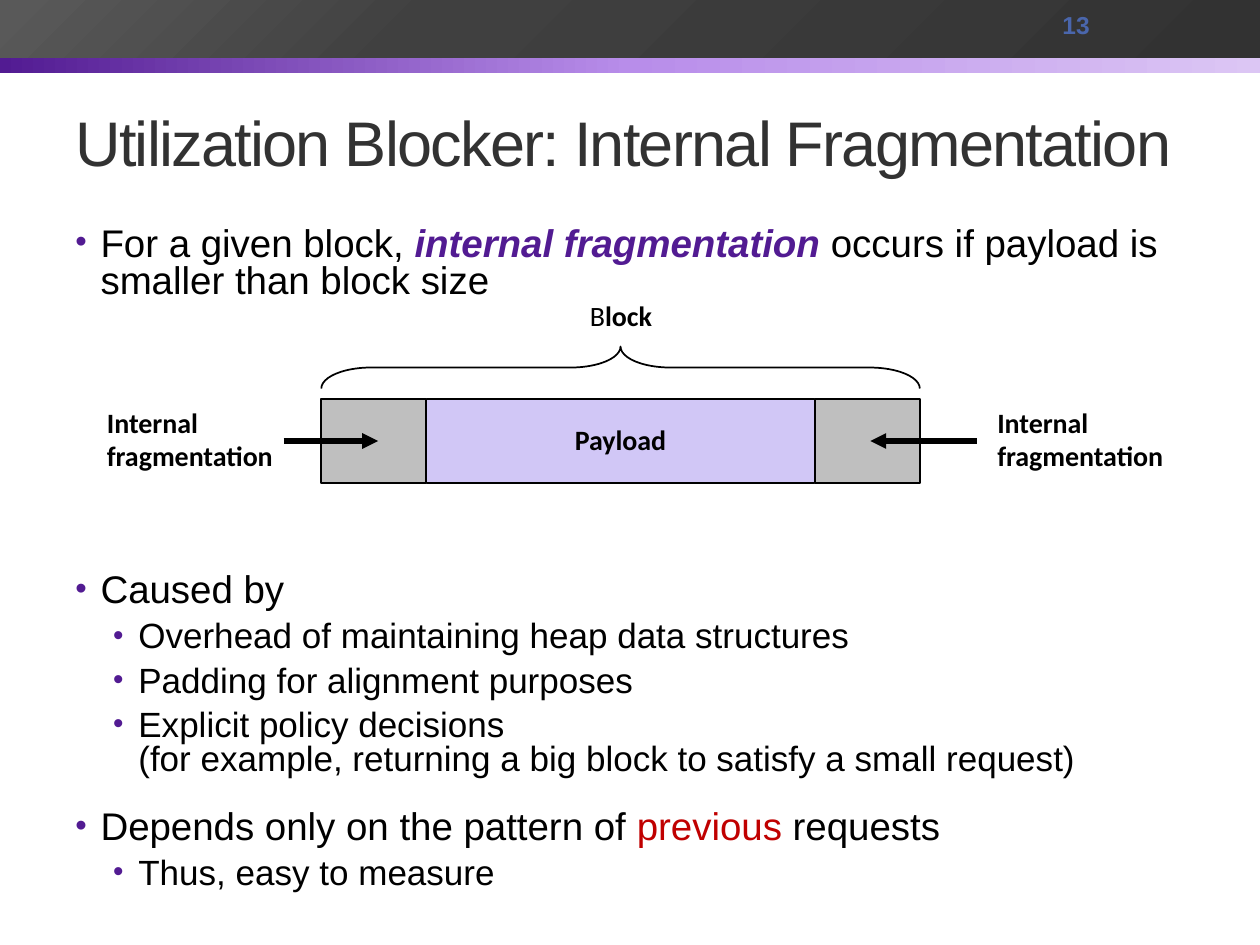
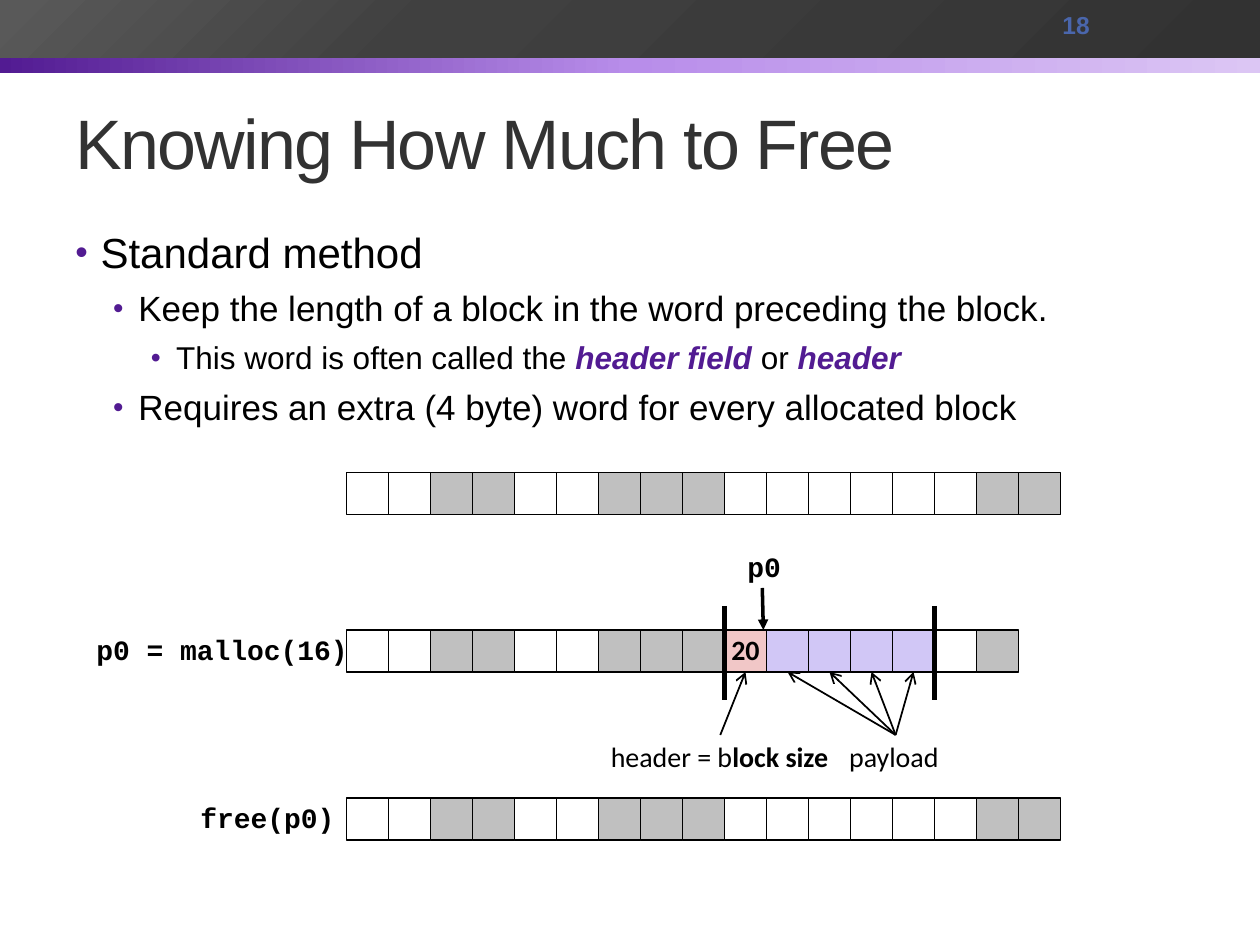
from lxml.etree import SubElement
from pptx import Presentation
from pptx.dml.color import RGBColor
from pptx.enum.shapes import MSO_CONNECTOR, MSO_SHAPE
from pptx.enum.text import MSO_ANCHOR, PP_ALIGN
from pptx.oxml.ns import qn
from pptx.util import Inches, Pt

COLUMNS, ROWS = 120, 90
BLACK, WHITE, CHARCOAL = "000000", "FFFFFF", "323232"
PURPLE, LAVENDER, PINK, RED = "521B92", "D1C7F6", "F1C7C7", "C00000"
GRAY, LIGHT_GRAY, NUMBER_BLUE = "BFBFBF", "C0C0C0", "4A66AC"
PURPLE_FADE = [(0, PURPLE), (50, "B88DEA"), (100, "DCC6F4")]
DARK_FADE = [(0, CHARCOAL), (66, "404040"), (99, "595959")]

BULLET_SIZES = {0: 85, 1: 85, 2: 90}
KEY_TERM = {"color": PURPLE, "bold": True, "italic": True}
BOLD = {"bold": True}


def rgb(color):
    return RGBColor.from_string(color)


def add_xml(parent, tag, **attributes):
    return SubElement(parent, qn(tag), {key: str(value) for key, value in attributes.items()})


class Deck:
    """Holds the style and the current slide; lengths are columns and rows of the grid."""

    def __init__(self):
        self.presentation = Presentation()
        self.presentation.slide_width = Inches(10)
        self.presentation.slide_height = Inches(7.5)
        self.column = self.presentation.slide_width / COLUMNS
        self.row = self.presentation.slide_height / ROWS
        self.slide = None

    def place(self, left, top, width, height):
        return (round(left * self.column), round(top * self.row),
                round(width * self.column), round(height * self.row))

    def new_slide(self, title, title_size, number):
        self.slide = self.presentation.slides.add_slide(self.presentation.slide_layouts[6])
        self.band(2.9, 4.1, PURPLE_FADE, 0)
        self.band(0, 5.5, DARK_FADE, 225)
        heading = self.text_box((6, 7, 108, 13), anchor=MSO_ANCHOR.MIDDLE)
        self.add_text(heading.paragraphs[0], title, title_size, color=CHARCOAL)
        heading.paragraphs[0].runs[0].font._element.set("spc", "-100")
        page = self.text_box((100, 0.25, 14, 4.3), anchor=MSO_ANCHOR.MIDDLE)
        self.add_text(page.paragraphs[0], number, 14, color=NUMBER_BLUE, bold=True)

    def band(self, top, height, stops, angle):
        band = self.shape(MSO_SHAPE.RECTANGLE, (0, top, COLUMNS, height))
        band.line.fill.background()
        band.fill.gradient()
        gradient = band._element.spPr.find(qn("a:gradFill"))
        for child in list(gradient):
            gradient.remove(child)
        stop_list = add_xml(gradient, "a:gsLst")
        for position, color in stops:
            stop = add_xml(stop_list, "a:gs", pos=position * 1000)
            add_xml(stop, "a:srgbClr", val=color)
        add_xml(gradient, "a:lin", ang=angle * 60000, scaled=0)

    def shape(self, preset, area, fill=None, line=1):
        shape = self.slide.shapes.add_shape(preset, *self.place(*area))
        shape.shadow.inherit = False
        if fill:
            shape.fill.solid()
            shape.fill.fore_color.rgb = rgb(fill)
        else:
            shape.fill.background()
        shape.line.color.rgb = rgb(BLACK)
        shape.line.width = Pt(line)
        return shape

    def box(self, area, fill, text="", line=1):
        box = self.shape(MSO_SHAPE.RECTANGLE, area, fill, line)
        if text:
            frame = box.text_frame
            frame.word_wrap = False
            frame.vertical_anchor = MSO_ANCHOR.MIDDLE
            frame.paragraphs[0].alignment = PP_ALIGN.CENTER
            frame.paragraphs[0].line_spacing = 0.98
            self.add_text(frame.paragraphs[0], text, 16, "Calibri", bold=True)
        return box

    def text_box(self, area, wrap=True, anchor=MSO_ANCHOR.TOP):
        frame = self.slide.shapes.add_textbox(*self.place(*area)).text_frame
        frame.word_wrap = wrap
        frame.vertical_anchor = anchor
        return frame

    def add_text(self, paragraph, text, size, font="Arial", color=BLACK, bold=False, italic=False):
        """Append text to the paragraph; a newline becomes a line break."""
        for index, line in enumerate(text.split("\n")):
            if index:
                paragraph.add_line_break()
            run = paragraph.add_run()
            run.text = line
            run.font.size = Pt(size)
            run.font.name = font
            run.font.bold = bold
            run.font.italic = italic
            run.font.color.rgb = rgb(color)

    def label(self, area, *lines, font="Calibri", spacing=0.98):
        """Each line is a list of (text, style) pieces."""
        frame = self.text_box(area, wrap=False)
        for index, pieces in enumerate(lines):
            paragraph = frame.add_paragraph() if index else frame.paragraphs[0]
            paragraph.line_spacing = spacing
            for text, style in pieces:
                self.add_text(paragraph, text, 16, font, **style)

    def code(self, area, text):
        self.label(area, [(text, BOLD)], font="Courier New", spacing=0.94)

    def bullets(self, items, sizes, line_spacing, gap):
        """Each item is (level, space before or None, pieces)."""
        frame = self.text_box((6, 21, 108, 64))
        for index, (level, space, pieces) in enumerate(items):
            paragraph = frame.add_paragraph() if index else frame.paragraphs[0]
            paragraph.level = level
            paragraph.line_spacing = line_spacing
            paragraph.space_before = Pt(space or gap)
            properties = paragraph._p.get_or_add_pPr()
            properties.set("marL", str(Inches(0.2 + 0.3 * level)))
            properties.set("indent", str(-Inches(0.2)))
            add_xml(add_xml(properties, "a:buClr"), "a:srgbClr", val=PURPLE)
            add_xml(properties, "a:buSzPct", val=BULLET_SIZES[level] * 1000)
            add_xml(properties, "a:buFont", typeface="Arial")
            add_xml(properties, "a:buChar", char="•")
            for text, style in pieces:
                self.add_text(paragraph, text, sizes[level], **style)

    def line(self, start, end, width, head=None, target=None):
        """Draw a line; a target is joined at the middle of its bottom side."""
        ends = self.place(*start, *end)
        line = self.slide.shapes.add_connector(MSO_CONNECTOR.STRAIGHT, *ends)
        if target is not None:
            line.end_connect(target, 2)
        line.line.color.rgb = rgb(BLACK)
        line.line.width = Pt(width)
        properties = line._element.spPr
        if head:
            add_xml(properties.find(qn("a:ln")), "a:tailEnd", type=head)
        add_xml(properties, "a:effectLst")

    def memory(self, top, words):
        """Draw one heap row, a square for each letter of words."""
        fills = {".": WHITE, "#": LIGHT_GRAY, "H": PINK, "P": LAVENDER}
        return [self.box((33 + 4 * index, top, 4, 4), fills[word], "20" if word == "H" else "")
                for index, word in enumerate(words)]


def internal_fragmentation(deck):
    deck.new_slide("Utilization Blocker: Internal Fragmentation", 36, "13")
    deck.bullets([
        (0, None, [("For a given block, ", {}), ("internal fragmentation ", KEY_TERM),
                   ("occurs if payload is smaller than block size", {})]),
        (0, 155, [("Caused by", {})]),
        (1, None, [("Overhead of maintaining heap data structures", {})]),
        (1, None, [("Padding for alignment purposes", {})]),
        (1, None, [("Explicit policy decisions\n"
                    "(for example, returning a big block to satisfy a small request)", {})]),
        (0, 18, [("Depends only on the pattern of ", {}), ("previous", {"color": RED}),
                 (" requests", {})]),
        (1, None, [("Thus, easy to measure", {})]),
    ], sizes=(22, 20), line_spacing=0.82, gap=5.6)

    deck.box((40.6, 38, 37, 8), LAVENDER, "Payload", line=0.75)
    for padding_left in (77.6, 30.6):
        deck.box((padding_left, 38, 10, 8), GRAY)
    brace = deck.shape(MSO_SHAPE.RIGHT_BRACE, (57.1, 6.5, 4, 57))
    brace.rotation = 270
    brace.adjustments[0] = 1.19
    deck.label((55, 28, 8.4, 4.4), [("B", {}), ("lock", BOLD)])
    for label_left, arrow_start, arrow_end in ((93.8, 93, 82.9), (9, 27, 36)):
        deck.label((label_left, 38.2, 18.4, 7.6),
                   [("Internal", BOLD)], [("fragmentation", BOLD)])
        deck.line((arrow_start, 42), (arrow_end, 42), 3, "triangle")


def knowing_how_much_to_free(deck):
    deck.new_slide("Knowing How Much to Free", 40, "18")
    deck.bullets([
        (0, None, [("Standard method", {})]),
        (1, None, [("Keep the length of a block in the word preceding the block.", {})]),
        (2, None, [("This word is often called the ", {}), ("header field ", KEY_TERM),
                   ("or ", {}), ("header", KEY_TERM)]),
        (1, None, [("Requires an extra (4 byte) word for every allocated block", {})]),
    ], sizes=(24, 20, 18), line_spacing=1.0, gap=5.5)

    free_heap = "..##..###......##"
    deck.memory(45, free_heap)
    allocated = deck.memory(60, "..##..###HPPPP.#")
    deck.memory(76, free_heap)
    deck.code((8, 59.9, 26.6, 4.3), "p0 = malloc(16)")
    deck.code((17.9, 75.9, 15.4, 4.3), "free(p0)")
    deck.code((70, 52, 5.6, 4.2), "p0")
    deck.line((72.6, 56), (72.7, 60), 2, "triangle")
    for block_edge in (69, 89):
        deck.line((block_edge, 57.7), (block_edge, 66.7), 3)

    deck.label((57, 70, 23.3, 4.4), [("header = b", {}), ("lock size", BOLD)])
    deck.label((79.7, 70, 11.3, 4.4), [("payload", {})])
    header, *payload = allocated[9:14]
    deck.line((68.6, 70), (71, 64), 1, "arrow", header)
    for word in payload:
        deck.line((85.3, 70), (85.3, 64), 1, "arrow", word)


def main():
    deck = Deck()
    internal_fragmentation(deck)
    knowing_how_much_to_free(deck)
    deck.presentation.save("out.pptx")


if __name__ == "__main__":
    main()
